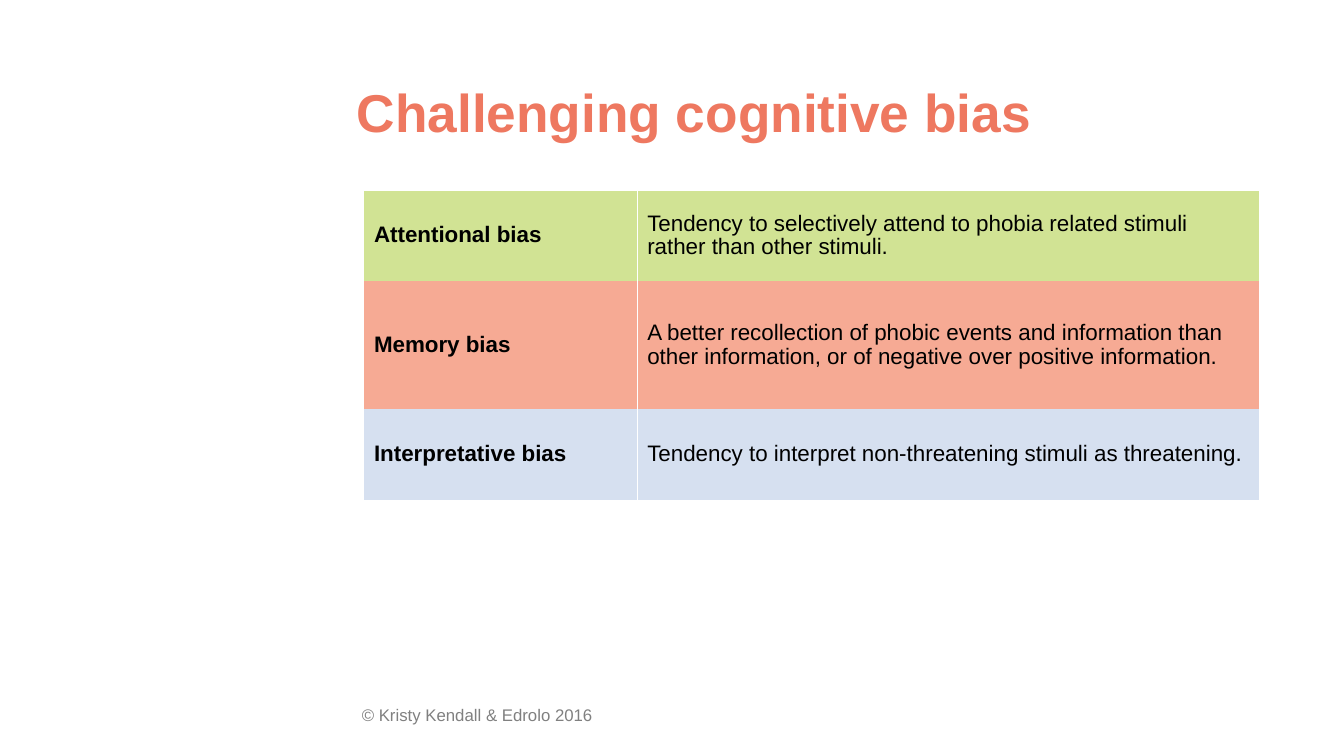
"""Build the slide on challenging cognitive bias."""
import pptx
import pptx.dml.color
import pptx.enum.text
import pptx.oxml
import pptx.oxml.ns
import pptx.util

Inches = pptx.util.Inches
Pt = pptx.util.Pt
RGBColor = pptx.dml.color.RGBColor
ANCHOR = pptx.enum.text.MSO_ANCHOR

CORAL = RGBColor(0xEE, 0x78, 0x60)
GREY = RGBColor(0x80, 0x80, 0x80)
BLACK = RGBColor(0, 0, 0)
GREEN = RGBColor(0xD1, 0xE3, 0x94)
SALMON = RGBColor(0xF6, 0xAA, 0x94)
BLUE = RGBColor(0xD6, 0xE0, 0xF0)
WHITE = RGBColor(0xFF, 0xFF, 0xFF)

TITLE = "Challenging cognitive bias"
FOOTER = "© Kristy Kendall & Edrolo 2016"
COLS = (2.71, 6.17)
ROWS = [
    (0.9, GREEN, "Attentional bias",
     "Tendency to selectively attend to phobia related stimuli rather than other stimuli."),
    (1.27, SALMON, "Memory bias",
     "A better recollection of phobic events and information than other information, "
     "or of negative over positive information."),
    (0.9, BLUE, "Interpretative bias",
     "Tendency to interpret non-threatening stimuli as threatening."),
]
PLAIN = "{2D5ABB26-0587-4C30-8999-92F81FD0307C}"


def write(frame, text, size, color, bold, spacing):
    frame.word_wrap = True
    para = frame.paragraphs[0]
    para.text = text
    para.line_spacing = spacing
    font = para.font
    font.name, font.size, font.bold = "Arial", Pt(size), bold
    font.color.rgb = color
    return para


def add_text(slide, box, text, size, color, bold, spacing, anchor, inset):
    frame = slide.shapes.add_textbox(*map(Inches, box)).text_frame
    frame.margin_left = frame.margin_right = Inches(inset)
    frame.vertical_anchor = anchor
    write(frame, text, size, color, bold, spacing)


def add_rule(cell, side):
    line = pptx.oxml.parse_xml(
        f'<a:{side} {pptx.oxml.ns.nsdecls("a")} w="{Pt(1)}">'
        f'<a:solidFill><a:srgbClr val="{WHITE}"/></a:solidFill></a:{side}>')
    cell._tc.get_or_add_tcPr().insert(0, line)


def add_grid(slide):
    high = sum(row[0] for row in ROWS)
    place = map(Inches, (3.61, 1.89, sum(COLS), high))
    frame = slide.shapes.add_table(len(ROWS), len(COLS), *place)
    table = frame.table
    table.first_row = table.horz_banding = False
    table._tbl.tblPr.find(pptx.oxml.ns.qn("a:tableStyleId")).text = PLAIN
    for col, width in zip(table.columns, COLS):
        col.width = Inches(width)
    for r, (height, fill, *texts) in enumerate(ROWS):
        table.rows[r].height = Inches(height)
        for c, text in enumerate(texts):
            cell = table.cell(r, c)
            cell.vertical_anchor = ANCHOR.MIDDLE
            cell.fill.solid()
            cell.fill.fore_color.rgb = fill
            add_rule(cell, ("lnR", "lnL")[c])
            para = write(cell.text_frame, text, 16, BLACK, c == 0, 0.95)
    para.space_after = Pt(12)


def main():
    deck = pptx.Presentation()
    deck.slide_width, deck.slide_height = Inches(13.33), Inches(7.5)
    slide = deck.slides.add_slide(deck.slide_layouts[6])
    add_text(slide, (3.49, 6.94, 4.5, 0.4), FOOTER, 12, GREY, False, 1.0,
             ANCHOR.TOP, 0.1)
    add_text(slide, (3.49, 0.72, 9, 0.85), TITLE, 38, CORAL, True, 0.9,
             ANCHOR.MIDDLE, 0.05)
    add_grid(slide)
    deck.save("out.pptx")


if __name__ == "__main__":
    main()
